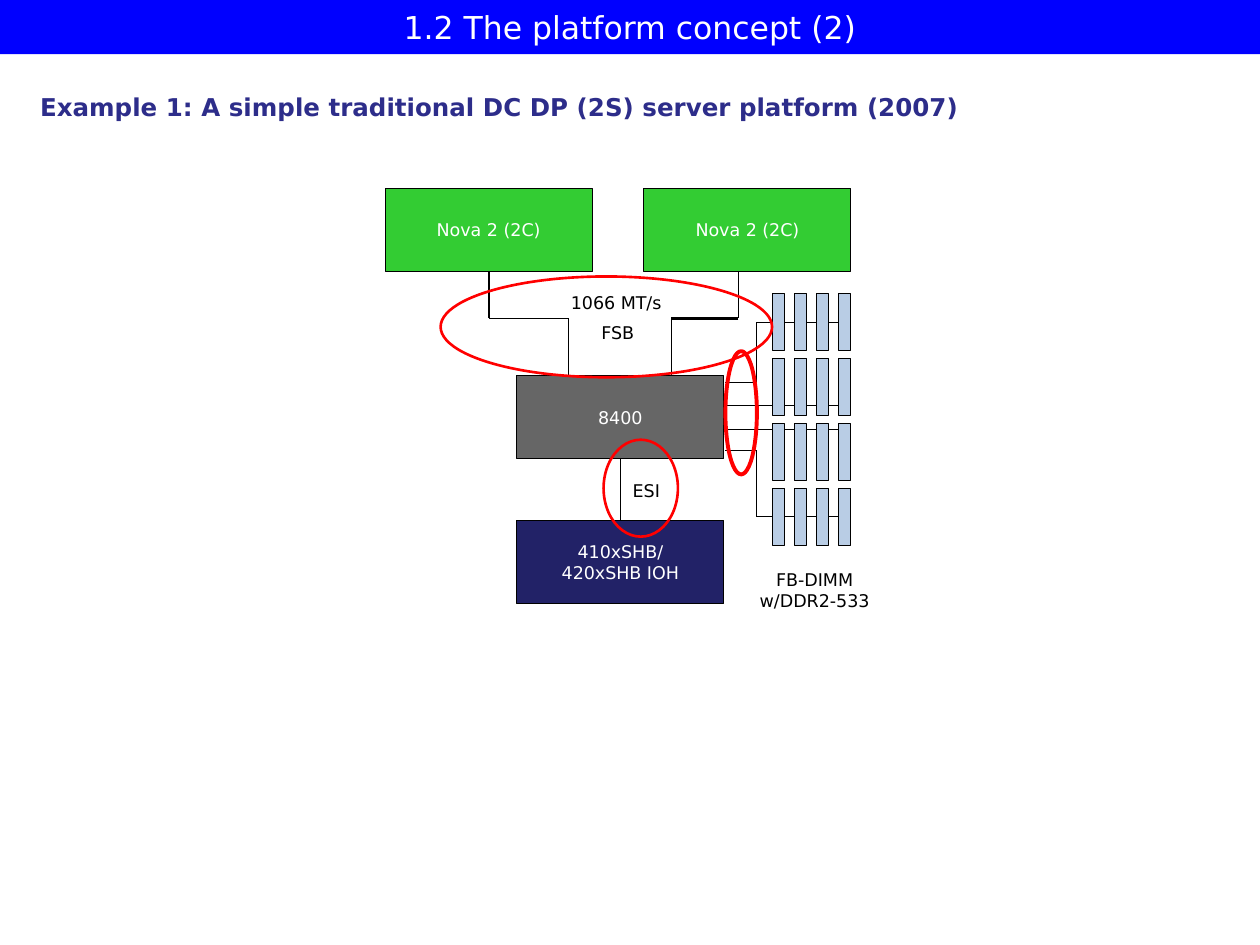
from dataclasses import dataclass
from typing import Any

from lxml import etree
from pptx import Presentation
from pptx import util as u
from pptx.dml import color
from pptx.enum import shapes, text
from pptx.oxml import ns


def rgb(value):
    return color.RGBColor.from_string(value)


@dataclass
class PlatformDiagram:
    """Draws the elements of a platform diagram on one slide, in points."""

    slide: Any
    font: str = "DejaVu Sans"
    size: float = 10
    ink: str = "000000"
    paper: str = "FFFFFF"
    accent: str = "FF0000"

    def add_words(self, frame, paragraphs, ink, size=None, bold=False, centred=True):
        for index, lines in enumerate(paragraphs):
            paragraph = frame.paragraphs[0] if index == 0 else frame.add_paragraph()
            paragraph.alignment = text.PP_ALIGN.CENTER if centred else text.PP_ALIGN.LEFT
            for number, line in enumerate(lines.split("\n")):
                if number:
                    paragraph.add_line_break()
                run = paragraph.add_run()
                run.text = line
                run.font.name = self.font
                run.font.size = u.Pt(size or self.size)
                run.font.bold = bold
                run.font.color.rgb = rgb(ink)

    def shape(self, kind, bounds, fill=None, line=None, weight=0.5):
        shape = self.slide.shapes.add_shape(kind, *map(u.Pt, bounds))
        shape.shadow.inherit = False
        if fill:
            shape.fill.solid()
            shape.fill.fore_color.rgb = rgb(fill)
        else:
            shape.fill.background()
        if line:
            shape.line.color.rgb = rgb(line)
            shape.line.width = u.Pt(weight)
        else:
            shape.line.fill.background()
        return shape

    def box(self, bounds, fill, label=None, size=None, outlined=True):
        line = self.ink if outlined else None
        shape = self.shape(shapes.MSO_SHAPE.RECTANGLE, bounds, fill, line)
        if label:
            frame = shape.text_frame
            frame.word_wrap = True
            frame.vertical_anchor = text.MSO_ANCHOR.MIDDLE
            self.add_words(frame, [label], self.paper, size)

    def ring(self, bounds, weight=1.5):
        self.shape(shapes.MSO_SHAPE.OVAL, bounds, None, self.accent, weight)

    def wire(self, start, end, weight=0.75):
        points = map(u.Pt, (*start, *end))
        wire = self.slide.shapes.add_connector(shapes.MSO_CONNECTOR.STRAIGHT, *points)
        wire.line.color.rgb = rgb(self.ink)
        wire.line.width = u.Pt(weight)
        etree.SubElement(wire.element.spPr, ns.qn("a:effectLst"))

    def label(self, bounds, *paragraphs, ink=None, inset=True, **style):
        frame = self.slide.shapes.add_textbox(*map(u.Pt, bounds)).text_frame
        frame.word_wrap = False
        frame.auto_size = text.MSO_AUTO_SIZE.SHAPE_TO_FIT_TEXT
        if not inset:
            frame.margin_left = frame.margin_right = 0
            frame.margin_top = frame.margin_bottom = 0
        self.add_words(frame, paragraphs, ink or self.ink, **style)


def main():
    presentation = Presentation()
    presentation.slide_width, presentation.slide_height = u.Pt(720), u.Pt(540)
    diagram = PlatformDiagram(presentation.slides.add_slide(presentation.slide_layouts[6]))

    diagram.box((0, 0, 720, 31), "0000FF", "1.2 The platform concept (2)", 18, False)
    diagram.label((15.8, 49, 545.8, 24.5),
                  "Example 1: A simple traditional DC DP (2S) server platform (2007)",
                  ink="2D2D8A", size=14, bold=True, centred=False)

    for left, top, fill, name in (
        (220.1, 107.5, "33CC33", "Nova 2 (2C)"),
        (368, 107.5, "33CC33", "Nova 2 (2C)"),
        (295.4, 214.6, "666666", "8400"),
        (295.4, 297.4, "222267", "410xSHB/\n420xSHB IOH"),
    ):
        diagram.box((left, top, 118.2, 47.6), fill, name)

    bus_top = 182
    for processor, hub, weight in ((279.4, 324.8, 0.75), (422, 383.6, 1.5)):
        diagram.wire((processor, 155), (processor, bus_top))
        diagram.wire((processor, bus_top), (hub, bus_top), weight)
        diagram.wire((hub, bus_top), (hub, 214.6))
    diagram.wire((354.6, 262.2), (354.6, 297.4))

    port, trunk, last_module = 414.5, 432, 479.5
    for channel, exit_level in ((184.2, 218.7), (295.2, 257.2)):
        diagram.wire((port, exit_level), (trunk, exit_level), 0.25)
        diagram.wire((trunk, exit_level), (trunk, channel), 0.25)
        diagram.wire((trunk, channel), (last_module, channel), 0.25)
    for channel in (231.5, 245.4):
        diagram.wire((port, channel), (last_module, channel), 0.25)

    for row in range(4):
        for column in range(4):
            diagram.box((441.2 + 12.6 * column, 167.6 + 37.1 * row, 7.2, 32.6), "B9CDE5")

    diagram.label((336.2, 180.7, 33.8, 19.4), "FSB")
    diagram.label((326.2, 167, 54, 12.2), "1066 MT/s", inset=False, centred=False)
    diagram.label((353.5, 270.7, 31.7, 19.4), "ESI")
    diagram.label((425.5, 321.8, 79.9, 31), "FB-DIMM", "w/DDR2-533")

    diagram.ring((251.8, 158, 189.4, 57.6))
    diagram.ring((344.9, 251.3, 42.5, 55.4))
    diagram.ring((414.5, 200.7, 18, 70.4), 2.25)

    presentation.save("out.pptx")


if __name__ == "__main__":
    main()
